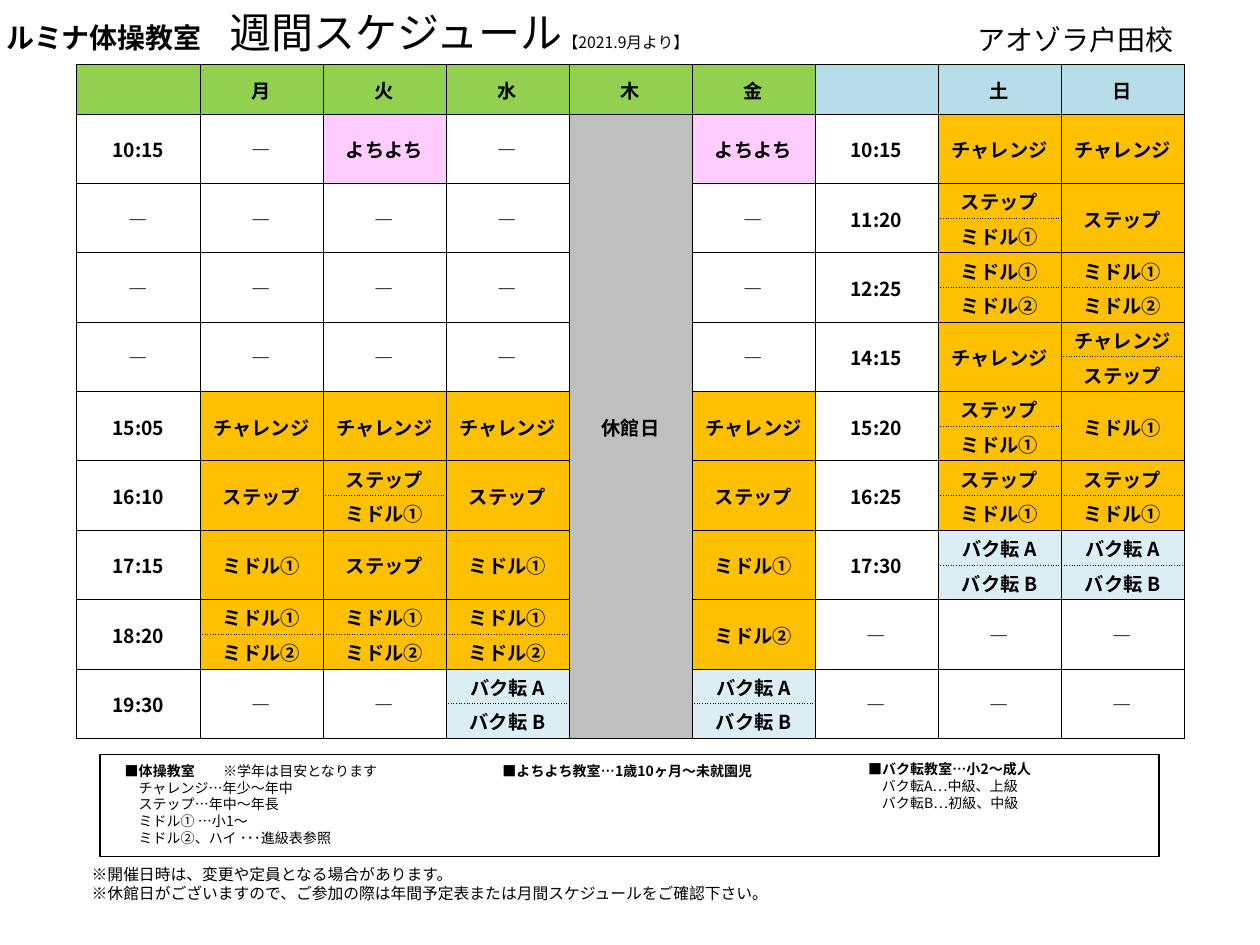
import pptx
import pptx.dml.color
import pptx.enum.dml
import pptx.enum.shapes
import pptx.enum.text
import pptx.oxml
import pptx.oxml.ns
import pptx.util
from lxml import etree
from pptx.util import Cm, Pt

FONT = "Noto Sans CJK JP"
BLACK = "000000"
GREEN, BLUE, PALE_BLUE = "92D050", "B7DEE8", "DBEEF4"
ORANGE, PINK, GREY = "FFC000", "FFCCFF", "BFBFBF"

CLASS_FILLS = {"チャレンジ": ORANGE, "ステップ": ORANGE, "ミドル①": ORANGE,
               "ミドル②": ORANGE, "バク転 A": PALE_BLUE, "バク転 B": PALE_BLUE,
               "よちよち": PINK, "休館日": GREY}
DAYS = ["", "月", "火", "水", "木", "金", "", "土", "日"]
CLOSED_COL, WEEKEND_COL = 4, 6

# One row per time slot; "/" divides a slot between two classes
MIDDLES, STEP_MIDDLE, FLIPS = "ミドル①/ミドル②", "ステップ/ミドル①", "バク転 A/バク転 B"
SLOTS = [
    ["10:15", "―", "よちよち", "―", "休館日", "よちよち", "10:15", "チャレンジ", "チャレンジ"],
    ["―", "―", "―", "―", None, "―", "11:20", STEP_MIDDLE, "ステップ"],
    ["―", "―", "―", "―", None, "―", "12:25", MIDDLES, MIDDLES],
    ["―", "―", "―", "―", None, "―", "14:15", "チャレンジ", "チャレンジ/ステップ"],
    ["15:05", "チャレンジ", "チャレンジ", "チャレンジ", None, "チャレンジ",
     "15:20", STEP_MIDDLE, "ミドル①"],
    ["16:10", "ステップ", STEP_MIDDLE, "ステップ", None, "ステップ",
     "16:25", STEP_MIDDLE, STEP_MIDDLE],
    ["17:15", "ミドル①", "ステップ", "ミドル①", None, "ミドル①", "17:30", FLIPS, FLIPS],
    ["18:20", MIDDLES, MIDDLES, MIDDLES, None, "ミドル②", "―", "―", "―"],
    ["19:30", "―", "―", FLIPS, None, FLIPS, "―", "―", "―"],
]


def rgb(value):
    return pptx.dml.color.RGBColor.from_string(value)


def add_text(p, text, size=8, bold=False, color=BLACK, spacing=0):
    """Add a formatted run to a paragraph; spacing is in points."""
    r = p.add_run()
    r.text = text
    r.font.size, r.font.bold = Pt(size), bold
    r.font.color.rgb = rgb(color)
    r.font.name = FONT
    rPr = r.font._element
    etree.SubElement(rPr, pptx.oxml.ns.qn("a:ea"), typeface=FONT)
    if spacing:
        rPr.set("spc", str(spacing * 100))


def fill_frame(sp, lines, indent=0):
    """Write lines of (text, format) runs; lines after the first are indented."""
    tf = sp.text_frame
    tf.word_wrap = True
    tf.auto_size = pptx.enum.text.MSO_AUTO_SIZE.SHAPE_TO_FIT_TEXT
    tf.vertical_anchor = pptx.enum.text.MSO_ANCHOR.TOP
    for i, runs in enumerate(lines):
        p = tf.paragraphs[0] if i == 0 else tf.add_paragraph()
        p.alignment = pptx.enum.text.PP_ALIGN.LEFT
        p.space_before = Pt(0)
        pPr = p._p.get_or_add_pPr()
        pPr.set("marL", str(Cm(indent if i else 0)))
        pPr.set("indent", "0")
        etree.SubElement(pPr, pptx.oxml.ns.qn("a:buNone"))
        for text, style in runs:
            add_text(p, text, **style)


def place(sp, left, top, width, height):
    sp.left, sp.top, sp.width, sp.height = Cm(left), Cm(top), Cm(width), Cm(height)


def add_box(s, at, lines, indent=0):
    sp = s.shapes.add_textbox(*(Cm(v) for v in at))
    fill_frame(sp, lines, indent)


def add_frame(s, *at):
    sp = s.shapes.add_shape(pptx.enum.shapes.MSO_SHAPE.RECTANGLE, *(Cm(v) for v in at))
    sp.shadow.inherit = False
    sp.fill.background()
    sp.line.color.rgb = rgb(BLACK)
    sp.line.width = Pt(1)


def set_borders(cell, dotted=None):
    """Draw thin borders on all sides; the dotted side divides a slot."""
    tcPr = cell._tc.get_or_add_tcPr()
    for side in "LRTB":
        dash = "sysDot" if side == dotted else "solid"
        tcPr.append(pptx.oxml.parse_xml(
            f'<a:ln{side} {pptx.oxml.ns.nsdecls("a")} w="{Pt(0.5)}">'
            f'<a:solidFill><a:srgbClr val="{BLACK}"/></a:solidFill>'
            f'<a:prstDash val="{dash}"/></a:ln{side}>'))


def set_cell(cell, text="", fill=None, dotted=None):
    set_borders(cell, dotted)
    if fill:
        cell.fill.solid()
        cell.fill.fore_color.rgb = rgb(fill)
    else:
        cell.fill.background()
    cell.margin_left = cell.margin_right = cell.margin_top = Cm(0.02)
    cell.margin_bottom = 0
    cell.vertical_anchor = pptx.enum.text.MSO_ANCHOR.MIDDLE
    p = cell.text_frame.paragraphs[0]
    p.alignment = pptx.enum.text.PP_ALIGN.CENTER
    if text:
        add_text(p, text, size=11, bold=True)
    else:
        etree.SubElement(p._p, pptx.oxml.ns.qn("a:endParaRPr"), sz="1100")


def add_schedule(s):
    row_count = 2 * len(SLOTS)
    table = s.shapes.add_table(row_count, len(DAYS), Cm(1.55), Cm(1.3),
                               Cm(22.32), Cm(13.6)).table
    table.first_row = table.horz_banding = False
    for col in table.columns:
        col.width = Cm(2.48)
    for i, row in enumerate(table.rows):
        row.height = Cm({0: 1, 1: 1.4}.get(i, 0.7))

    # Header row
    for c, day in enumerate(DAYS):
        set_cell(table.cell(0, c), day, GREEN if c < WEEKEND_COL else BLUE)

    # Time slots: the first takes one row, the others two
    for i, slot in enumerate(SLOTS):
        top, bottom = (2 * i, 2 * i + 1) if i else (1, 1)
        for c, entry in enumerate(slot):
            names = (entry or "").split("/")
            split = len(names) == 2
            set_cell(table.cell(top, c), names[0], CLASS_FILLS.get(names[0]),
                     "B" if split else None)
            if bottom > top:
                set_cell(table.cell(bottom, c), names[1] if split else "",
                         CLASS_FILLS.get(names[-1]), "T" if split else None)
                if not split and c != CLOSED_COL:
                    table.cell(top, c).merge(table.cell(bottom, c))

    # Closed day
    closed = table.cell(1, CLOSED_COL)
    closed.merge(table.cell(row_count - 1, CLOSED_COL))
    closed._tc.get_or_add_tcPr().set("vert", "eaVert")


def main():
    prs = pptx.Presentation()
    prs.slide_width, prs.slide_height = Cm(25.4), Cm(19.05)
    s = prs.slides.add_slide(prs.slide_layouts[1])
    title, legend = s.placeholders
    plain, bold, note = {}, {"bold": True}, {"size": 9}

    # Heading
    place(title, -0.13, 0, 16.61, 1.27)
    fill_frame(title, [[("ルミナ体操教室　", {"size": 16, "bold": True}),
                        ("週間スケジュール", {"size": 24}),
                        ("【2021.9月より】", note)]])
    add_box(s, (19.46, 0.33, 4.78, 0.94), [[("アオゾラ戸田校", {"size": 16})]])

    # Timetable
    add_schedule(s)

    # Class legend
    add_frame(s, 2.01, 15.21, 21.36, 2.06)
    place(legend, 2.26, 15.24, 7.26, 1.96)
    fill_frame(legend, [[("■体操教室", bold), ("　", {"spacing": 8}),
                         ("※学年は目安となります", plain)],
                        [("チャレンジ…年少～年中", plain)],
                        [("ステップ…年中～年長", plain)],
                        [("ミドル① …小1～", plain)],
                        [("ミドル②、ハイ ･･･進級表参照", plain)]], indent=0.28)
    add_box(s, (9.88, 15.24, 5.56, 1.37), [[("■よちよち教室…1歳10ヶ月～未就園児", bold)]])
    add_box(s, (17.25, 15.21, 7.26, 1.27),
            [[("■バク転教室…小2～成人", bold)],
             [("バク転A…中級、上級", plain)],
             [("バク転B…初級、中級", plain)]], indent=0.28)

    # Footnotes
    add_box(s, (1.6, 17.3, 17.45, 1.02),
            [[("※開催日時は、変更や定員となる場合があります。", note)],
             [("※休館日がございますので、ご参加の際は年間予定表または"
               "月間スケジュールをご確認下さい。", note)]])
    prs.save("out.pptx")


if __name__ == "__main__":
    main()
